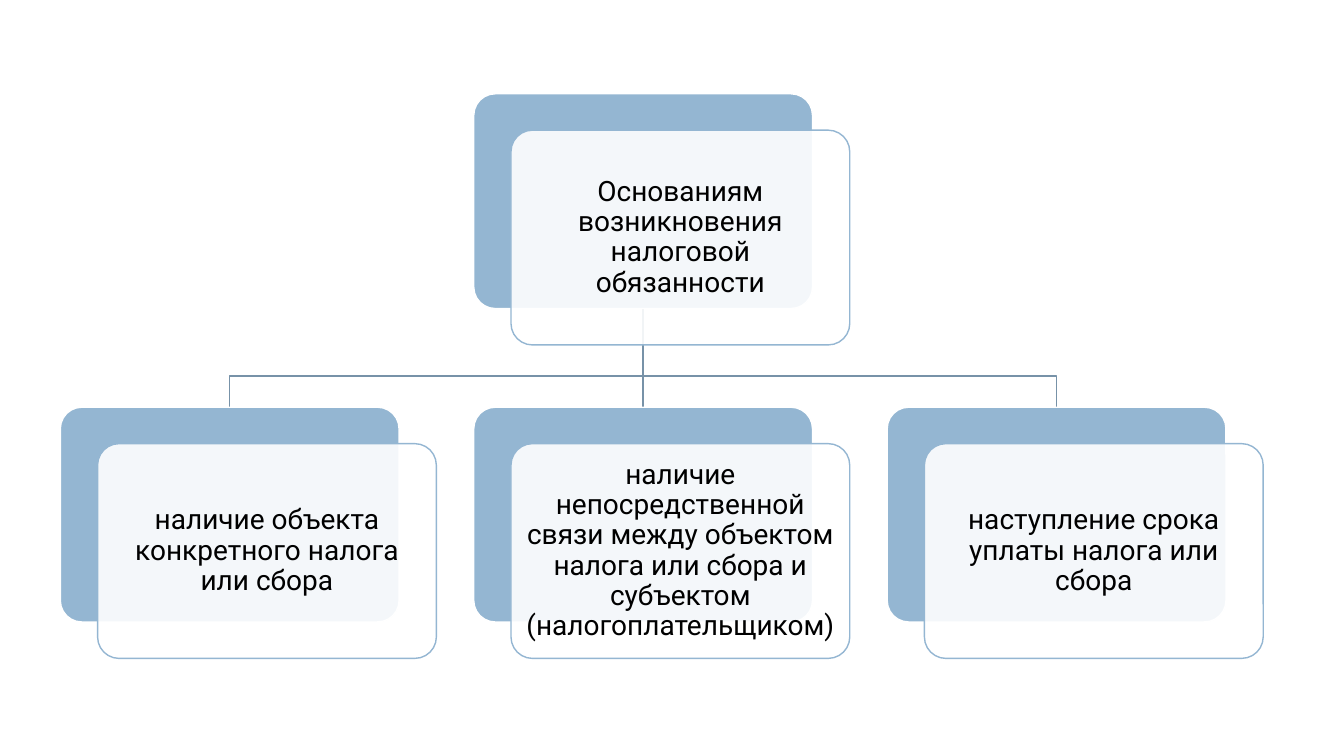
import pptx
import pptx.util
import pptx.dml.color
import pptx.enum.shapes
import pptx.enum.text
import pptx.oxml
import pptx.oxml.ns
from lxml import etree

Pt = pptx.util.Pt
COLORS = {"card": "94B6D2", "line": "7792A8", "white": "FFFFFF", "text": "000000"}
CARD_W, CARD_H = 242, 153.4
SHIFT_X, SHIFT_Y = 26.6, 26
LEFT, STEP = 43.1, 295.3
ROOT_Y, ROW_Y, BUS_Y = 67, 290.9, 268.6
ROOT = "Основаниям возникновения налоговой обязанности"
GROUNDS = [
    "наличие объекта конкретного налога или сбора",
    "наличие непосредственной связи между объектом налога или сбора и субъектом (налогоплательщиком)",
    "наступление срока уплаты налога или сбора",
]


def rgb(name):
    """Return a palette colour."""
    return pptx.dml.color.RGBColor.from_string(COLORS[name])


def write(tf, text, size=20, font="Roboto", color="text"):
    """Write one centred paragraph into a text frame."""
    tf.word_wrap = True
    tf.vertical_anchor = pptx.enum.text.MSO_ANCHOR.MIDDLE
    tf.margin_left = tf.margin_right = tf.margin_top = tf.margin_bottom = Pt(5.8)
    p = tf.paragraphs[0]
    p.alignment = pptx.enum.text.PP_ALIGN.CENTER
    p.line_spacing = 0.9
    p.space_after = Pt(size * 0.35)
    r = p.add_run()
    r.text = text
    r.font.size, r.font.name = Pt(size), font
    r.font.color.rgb = rgb(color)


def add_panel(s, x, y, fill, line, alpha=None):
    """Add one rounded rectangle of card size."""
    sp = s.shapes.add_shape(pptx.enum.shapes.MSO_SHAPE.ROUNDED_RECTANGLE,
                            Pt(x), Pt(y), Pt(CARD_W), Pt(CARD_H))
    sp.adjustments[0] = 0.1
    sp.shadow.inherit = False
    sp.fill.solid()
    sp.fill.fore_color.rgb = rgb(fill)
    sp.line.color.rgb = rgb(line)
    sp.line.width = Pt(1)
    if alpha is not None:
        clr = sp.fill._xPr.find(".//" + pptx.oxml.ns.qn("a:srgbClr"))
        etree.SubElement(clr, pptx.oxml.ns.qn("a:alpha"), val=str(alpha * 1000))
    return sp


def add_card(s, x, y, text):
    """Add a blue panel with a translucent text panel over it and return the blue one."""
    back = add_panel(s, x, y, "card", "white")
    front = add_panel(s, x + SHIFT_X, y + SHIFT_Y, "white", "card", alpha=90)
    write(front.text_frame, text)
    return back


def add_branch(s, x1, y1, x2, y2):
    """Add a right-angled line that turns at the bus level."""
    fb = s.shapes.build_freeform(Pt(x1), Pt(y1))
    fb.add_line_segments([(Pt(x1), Pt(BUS_Y)), (Pt(x2), Pt(BUS_Y)), (Pt(x2), Pt(y2))], close=False)
    sp = fb.convert_to_shape()
    sp.shadow.inherit = False
    sp.fill.background()
    sp.line.color.rgb = rgb("line")
    sp.line.width = Pt(1)


def add_stem(s, x, y1, y2):
    """Add the straight line between the root and the middle card."""
    cx = s.shapes.add_connector(pptx.enum.shapes.MSO_CONNECTOR.STRAIGHT, Pt(x), Pt(y1), Pt(x), Pt(y2))
    cx.line.color.rgb = rgb("line")
    cx.line.width = Pt(1)
    etree.SubElement(cx._element.spPr, pptx.oxml.ns.qn("a:effectLst"))
    return cx


def add_hierarchy(s, x, y):
    """Add the root card, its three grounds and the lines between them."""
    root_x = x + STEP
    mid, bottom = root_x + CARD_W / 2, y + CARD_H
    add_branch(s, mid, bottom, mid + STEP, ROW_Y)
    stem = add_stem(s, mid, bottom, ROW_Y)
    add_branch(s, mid, bottom, mid - STEP, ROW_Y)
    root = add_card(s, root_x, y, ROOT)
    cards = [add_card(s, x + i * STEP, ROW_Y, text) for i, text in enumerate(GROUNDS)]
    stem.begin_connect(root, 2)
    stem.end_connect(cards[1], 0)


def main():
    """Build and save the slide."""
    prs = pptx.Presentation()
    prs.slide_width, prs.slide_height = Pt(960), Pt(540)
    s = prs.slides.add_slide(prs.slide_layouts[6])
    add_hierarchy(s, LEFT, ROOT_Y)
    prs.save("out.pptx")


if __name__ == "__main__":
    main()
